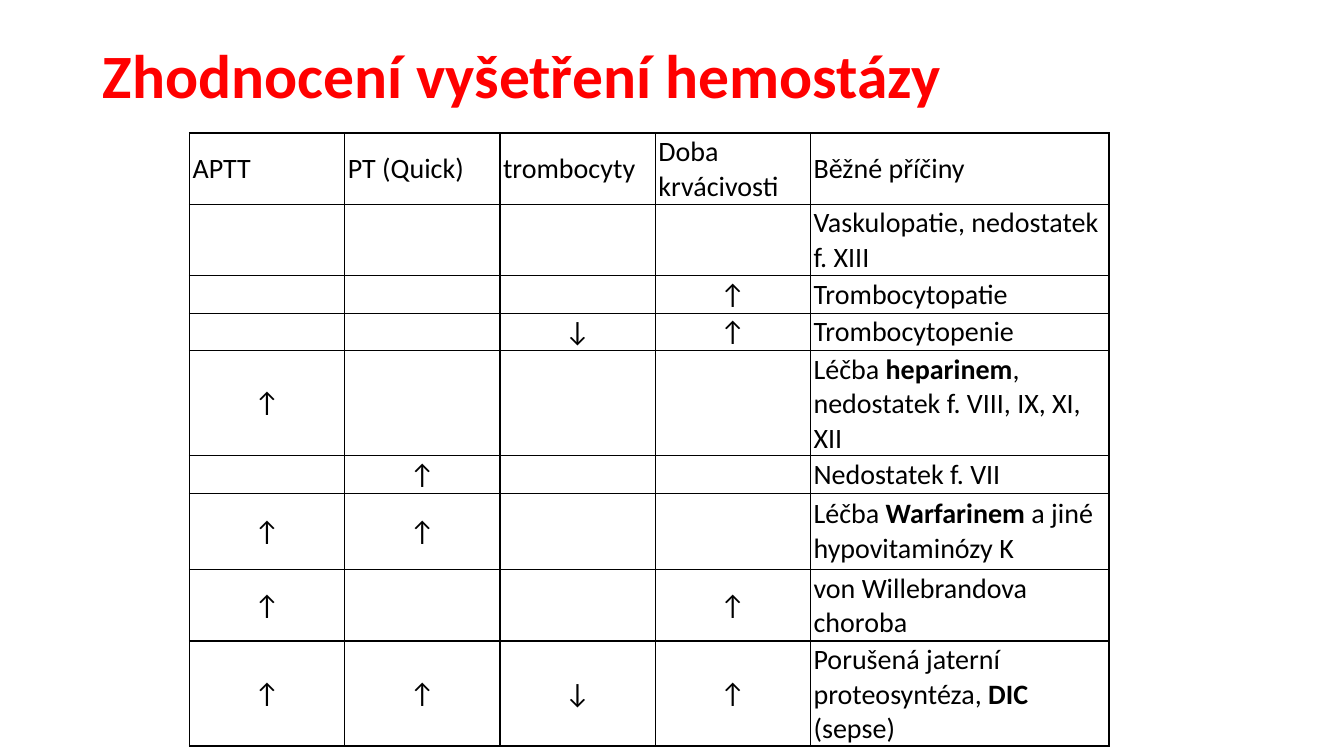
from lxml import etree
from pptx import Presentation
from pptx.dml.color import RGBColor
from pptx.enum import text
from pptx.oxml import ns
from pptx.util import Inches, Pt

COLORS = {"title": "FF0000", "ink": "000000"}
FONT = "Calibri"

COLUMN_WIDTHS = [1.54] * 4 + [2.96]
ROW_HEIGHTS = [0.66, 0.55, 0.34, 0.34, 0.76, 0.24, 0.76, 0.45, 0.66]
# Text between asterisks is bold
FINDINGS = [
    ["APTT", "PT (Quick)", "trombocyty", "Doba krvácivosti", "Běžné příčiny"],
    ["", "", "", "", "Vaskulopatie, nedostatek f. XIII"],
    ["", "", "", "↑", "Trombocytopatie"],
    ["", "", "↓", "↑", "Trombocytopenie"],
    ["↑", "", "", "", "Léčba *heparinem*, nedostatek f. VIII, IX, XI, XII"],
    ["", "↑", "", "", "Nedostatek f. VII"],
    ["↑", "↑", "", "", "Léčba *Warfarinem* a jiné hypovitaminózy K"],
    ["↑", "", "", "↑", "von Willebrandova choroba"],
    ["↑", "↑", "↓", "↑", "Porušená jaterní proteosyntéza, *DIC* (sepse)"],
]


def style_font(font, size, color, bold=False):
    font.name = FONT
    font.size = Pt(size)
    font.bold = bold
    font.color.rgb = RGBColor.from_string(COLORS[color])


def add_title(slide, left, top, width, height):
    heading = slide.shapes.add_textbox(
        Inches(left), Inches(top), Inches(width), Inches(height)).text_frame
    heading.word_wrap = True
    heading.vertical_anchor = text.MSO_ANCHOR.TOP
    heading.text = "Zhodnocení vyšetření hemostázy"
    line = heading.paragraphs[0]
    line.line_spacing = 0.9
    style_font(line.runs[0].font, 44, "title", bold=True)


def add_borders(cell):
    properties = cell._tc.get_or_add_tcPr()
    for side in ("a:lnL", "a:lnR", "a:lnT", "a:lnB"):
        border = etree.SubElement(properties, ns.qn(side), w=str(Pt(1)))
        fill = etree.SubElement(border, ns.qn("a:solidFill"))
        etree.SubElement(fill, ns.qn("a:srgbClr"), val=COLORS["ink"])


def fill_cell(cell, content):
    cell.margin_left = cell.margin_right = Inches(0.03)
    cell.margin_top = cell.margin_bottom = Inches(0.02)
    cell.vertical_anchor = text.MSO_ANCHOR.MIDDLE
    add_borders(cell)
    cell.fill.background()
    if not content:
        return
    paragraph = cell.text_frame.paragraphs[0]
    if content in "↑↓":
        paragraph.alignment = text.PP_ALIGN.CENTER
    for index, part in enumerate(content.split("*")):
        run = paragraph.add_run()
        run.text = part
        style_font(run.font, 20, "ink", bold=index % 2 == 1)


def add_findings(slide, left, top):
    table = slide.shapes.add_table(
        len(ROW_HEIGHTS), len(COLUMN_WIDTHS), Inches(left), Inches(top),
        Inches(sum(COLUMN_WIDTHS)), Inches(sum(ROW_HEIGHTS))).table
    table.first_row = table.horz_banding = False
    for column, width in zip(table.columns, COLUMN_WIDTHS):
        column.width = Inches(width)
    for row, height, contents in zip(table.rows, ROW_HEIGHTS, FINDINGS):
        row.height = Inches(height)
        for cell, content in zip(row.cells, contents):
            fill_cell(cell, content)


def main():
    deck = Presentation()
    deck.slide_width, deck.slide_height = Inches(13.33), Inches(7.5)
    slide = deck.slides.add_slide(deck.slide_layouts[6])
    add_title(slide, 0.92, 0.4, 11.5, 1.45)
    add_findings(slide, 1.88, 1.32)
    deck.save("out.pptx")


if __name__ == "__main__":
    main()
